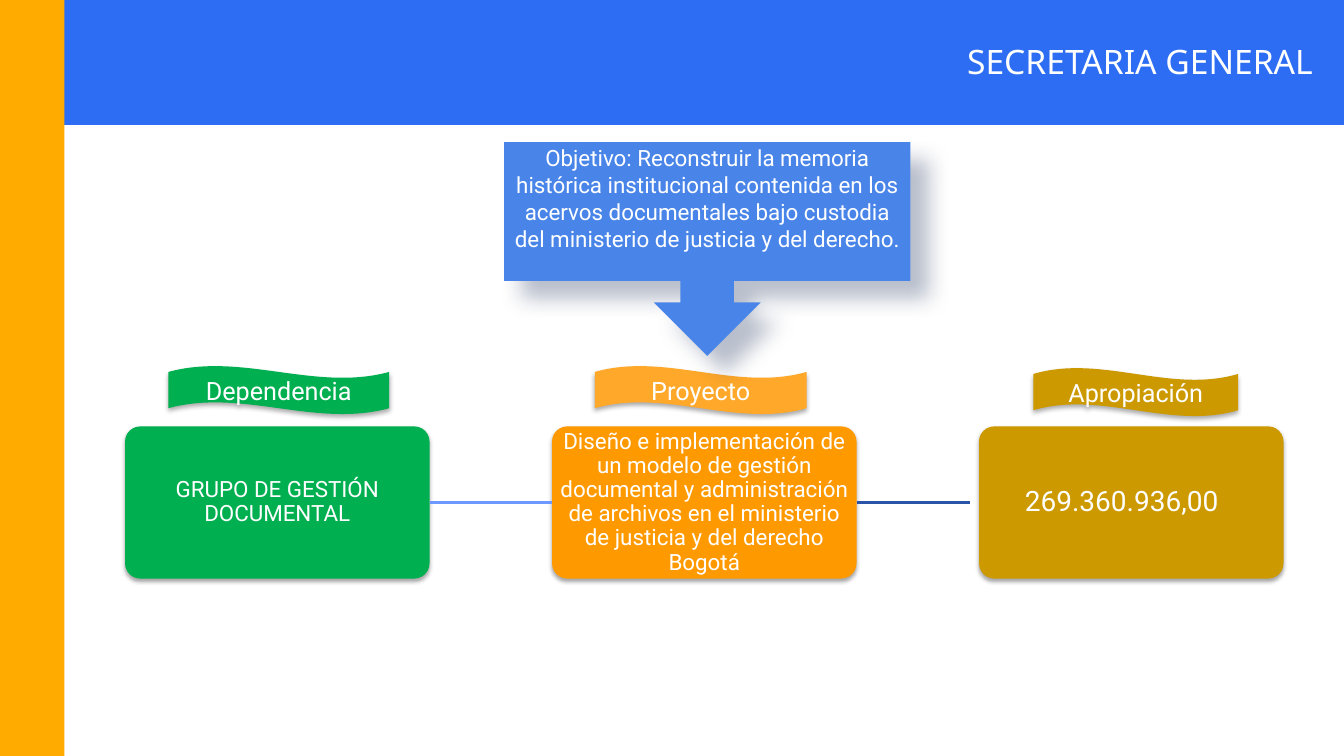
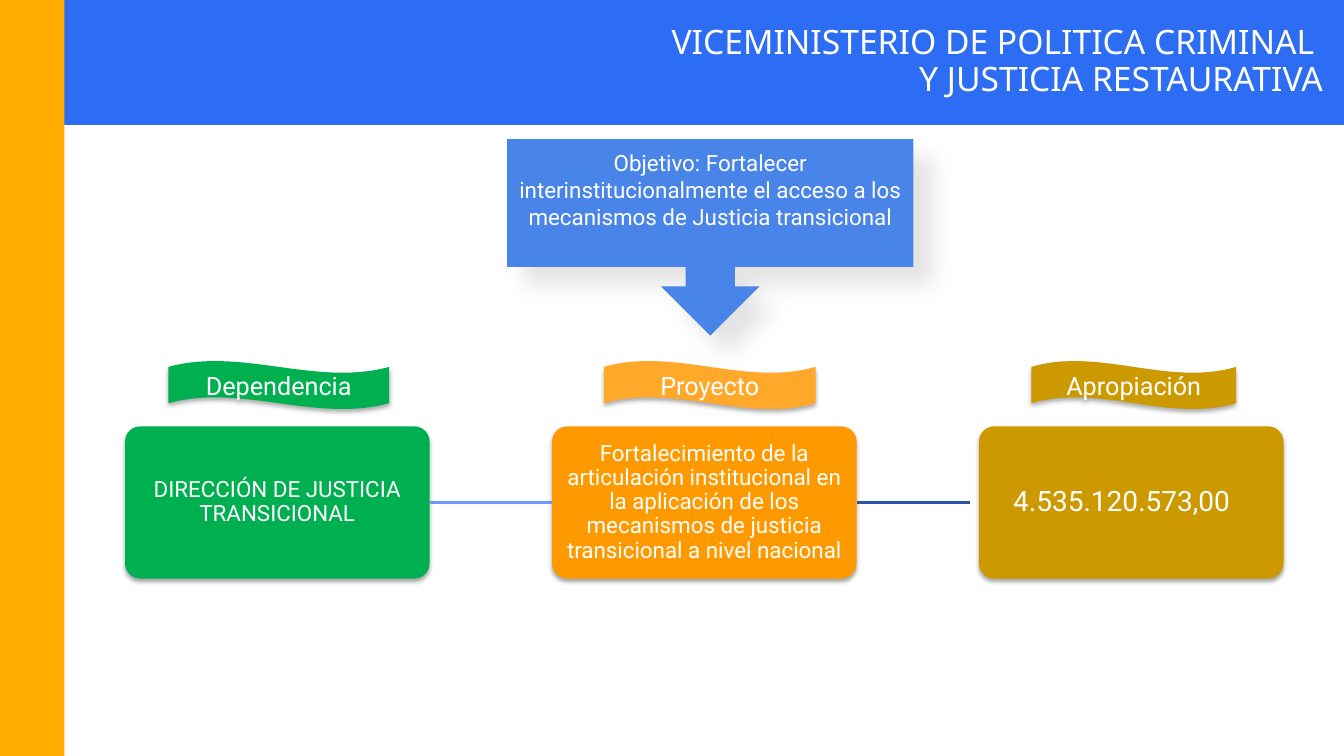
import pptx
import pptx.util
from lxml import etree
from pptx.dml.color import RGBColor
from pptx.enum.shapes import MSO_CONNECTOR, MSO_SHAPE
from pptx.enum.text import MSO_ANCHOR, MSO_AUTO_SIZE, PP_ALIGN
from pptx.oxml.ns import qn

Inches, Pt = pptx.util.Inches, pptx.util.Pt

WHITE = RGBColor(0xFF, 0xFF, 0xFF)
BLACK = RGBColor(0x00, 0x00, 0x00)
BLUE = RGBColor(0x2D, 0x6D, 0xF3)
AMBER = RGBColor(0xFF, 0xAB, 0x00)
GREEN = RGBColor(0x00, 0xB0, 0x50)
ORANGE = RGBColor(0xFF, 0x99, 0x00)
LIGHT_ORANGE = RGBColor(0xFF, 0xA8, 0x29)
GOLD = RGBColor(0xCC, 0x99, 0x00)
CALLOUT_BLUE = RGBColor(0x49, 0x85, 0xE9)
NAVY = RGBColor(0x15, 0x2A, 0x54)
GREY = RGBColor(0xA6, 0xA6, 0xA6)
LINK_BLUES = RGBColor(0x6D, 0x98, 0xFF), RGBColor(0x2A, 0x54, 0xA7)

TITLE_FONT, BODY_FONT = "Noto Sans", "Roboto"
WIDTH, HEIGHT = 13.33, 7.5
BANDS = [(WIDTH, 1.24, BLUE), (0.64, HEIGHT, AMBER)]

CARD_LEFT, CARD_TOP, CARD_PITCH = 1.24, 4.23, 4.235
CARD_WIDTH, CARD_HEIGHT = 3.02, 1.51
LAST_LINK_LENGTH = 1.13
RIBBON_HEIGHT = 0.48
CALLOUT_WIDTH = 4.03
SPARE_LINE = 0.27

# Ribbon label, ribbon width, ribbon colour, card colour, card text size, card right inset
COLUMNS = [
    ("Dependencia", 2.19, GREEN, GREEN, 16, 0.01),
    ("Proyecto", 2.1, LIGHT_ORANGE, ORANGE, 16, 0.01),
    ("Apropiación", 2.03, GOLD, GOLD, 20, 0.2),
]

# Opacity in percent, blur in points, distance in points, angle in degrees
CARD_SHADOW = 35, 3.1, 1.8, 90
RIBBON_SHADOW = 32, 3.5, 2.2, 90
CALLOUT_SHADOW = 30, 15, 18, 45

SLIDES = [
    {
        "title": "SECRETARIA GENERAL",
        "title_box": (3.37, 0, 9.72, 1.27),
        "objective": "Objetivo: Reconstruir la memoria histórica institucional contenida "
                     "en los acervos documentales bajo custodia del ministerio de justicia "
                     "y del derecho.",
        "callout": (5, 1.41, CALLOUT_WIDTH, 2.12),
        "callout_shadow": NAVY,
        "ribbons": [(1.67, 3.63), (5.9, 3.63), (10.25, 3.65)],
        "cards": [
            "GRUPO DE GESTIÓN DOCUMENTAL",
            "Diseño e implementación de un modelo de gestión documental y administración "
            "de archivos en el ministerio de justicia y del derecho Bogotá",
            "269.360.936,00",
        ],
    },
    {
        "title": "VICEMINISTERIO DE POLITICA CRIMINAL \vY JUSTICIA RESTAURATIVA",
        "title_box": (4.9, -0.02, 8.29, 1.27),
        "objective": "Objetivo: Fortalecer interinstitucionalmente el acceso a los "
                     "mecanismos de Justicia transicional",
        "callout": (5.03, 1.38, CALLOUT_WIDTH, 1.95),
        "callout_shadow": GREY,
        "ribbons": [(1.67, 3.58), (5.99, 3.58), (10.23, 3.58)],
        "cards": [
            "DIRECCIÓN DE JUSTICIA TRANSICIONAL",
            "Fortalecimiento de la articulación institucional en la aplicación de los "
            "mecanismos de justicia transicional a nivel nacional",
            "4.535.120.573,00",
        ],
    },
]


def add_filled(page, kind, box, color):
    shape = page.shapes.add_shape(kind, *map(Inches, box))
    shape.shadow.inherit = False
    shape.fill.solid()
    shape.fill.fore_color.rgb = color
    shape.line.fill.background()
    return shape


def add_shadow(shape, color, opacity, blur, distance, angle):
    effects = shape.element.spPr.find(qn("a:effectLst"))
    outer = etree.SubElement(
        effects, qn("a:outerShdw"), blurRad=str(Pt(blur)), dist=str(Pt(distance)),
        dir=str(angle * 60000), algn="tl", rotWithShape="0")
    tone = etree.SubElement(outer, qn("a:srgbClr"), val=str(color))
    etree.SubElement(tone, qn("a:alpha"), val=str(opacity * 1000))


def write(shape, text, size, insets, font=BODY_FONT, align=PP_ALIGN.CENTER, spacing=None):
    """Fill a shape with one white paragraph; insets are left, top, right, bottom."""
    frame = shape.text_frame
    frame.word_wrap = True
    frame.auto_size = MSO_AUTO_SIZE.NONE
    frame.vertical_anchor = MSO_ANCHOR.MIDDLE
    (frame.margin_left, frame.margin_top,
     frame.margin_right, frame.margin_bottom) = map(Inches, insets)
    para = frame.paragraphs[0]
    para.text = text
    para.alignment = align
    para.line_spacing = spacing
    para.font.name = font
    para.font.size = Pt(size)
    para.font.color.rgb = WHITE


def add_link(page, start, end, color):
    """Draw a line from one card to the next, or a free-ended one when end is None."""
    x = start.left + start.width
    y = start.top + start.height // 2
    link = page.shapes.add_connector(
        MSO_CONNECTOR.STRAIGHT, x, y, x + Inches(LAST_LINK_LENGTH), y)
    link.begin_connect(start, 3)
    if end is not None:
        link.end_connect(end, 1)
    link.line.color.rgb = color
    link.line.width = Pt(2)
    etree.SubElement(link.element.spPr, qn("a:effectLst"))


def move_bands_to_layout(page, layout):
    for holder in list(layout.placeholders):
        if holder.placeholder_format.idx > 0:
            holder.element.getparent().remove(holder.element)
    for position, (width, height, color) in enumerate(BANDS, start=2):
        band = add_filled(page, MSO_SHAPE.RECTANGLE, (0, 0, width, height), color)
        band.element.nvSpPr.cNvPr.set("id", str(position + 8))
        layout.shapes.element.insert(position, band.element)


def build_page(page, content):
    title = page.shapes.title
    title.left, title.top, title.width, title.height = map(Inches, content["title_box"])
    write(title, content["title"], 24, (0.07, 0.04, 0.07, 0.04),
          TITLE_FONT, PP_ALIGN.RIGHT, 0.9)

    cards = []
    for index, (column, text, corner) in enumerate(
            zip(COLUMNS, content["cards"], content["ribbons"])):
        label, ribbon_width, ribbon_color, card_color, size, right_inset = column
        left = CARD_LEFT + index * CARD_PITCH
        card = add_filled(page, MSO_SHAPE.ROUNDED_RECTANGLE,
                          (left, CARD_TOP, CARD_WIDTH, CARD_HEIGHT), card_color)
        card.adjustments[0] = 0.1
        add_shadow(card, BLACK, *CARD_SHADOW)
        write(card, text, size, (0.01, 0.01, right_inset, 0.01), spacing=0.9)
        cards.append(card)

        ribbon = add_filled(page, MSO_SHAPE.WAVE,
                            (*corner, ribbon_width, RIBBON_HEIGHT), ribbon_color)
        add_shadow(ribbon, BLACK, *RIBBON_SHADOW)
        write(ribbon, label, 18, (0.1, 0.05, 0.1, 0.05))

    add_link(page, cards[0], cards[1], LINK_BLUES[0])
    add_link(page, cards[1], None, LINK_BLUES[1])

    callout = add_filled(page, MSO_SHAPE.DOWN_ARROW_CALLOUT, content["callout"], CALLOUT_BLUE)
    add_shadow(callout, content["callout_shadow"], *CALLOUT_SHADOW)
    write(callout, content["objective"], 16, (0.1, 0, 0.1, SPARE_LINE))


def main():
    deck = pptx.Presentation()
    deck.slide_width, deck.slide_height = Inches(WIDTH), Inches(HEIGHT)
    layout = deck.slide_layouts.get_by_name("Title Only")
    pages = [deck.slides.add_slide(layout) for _ in SLIDES]
    move_bands_to_layout(pages[0], layout)
    for page, content in zip(pages, SLIDES):
        build_page(page, content)
    deck.save("out.pptx")


if __name__ == "__main__":
    main()
